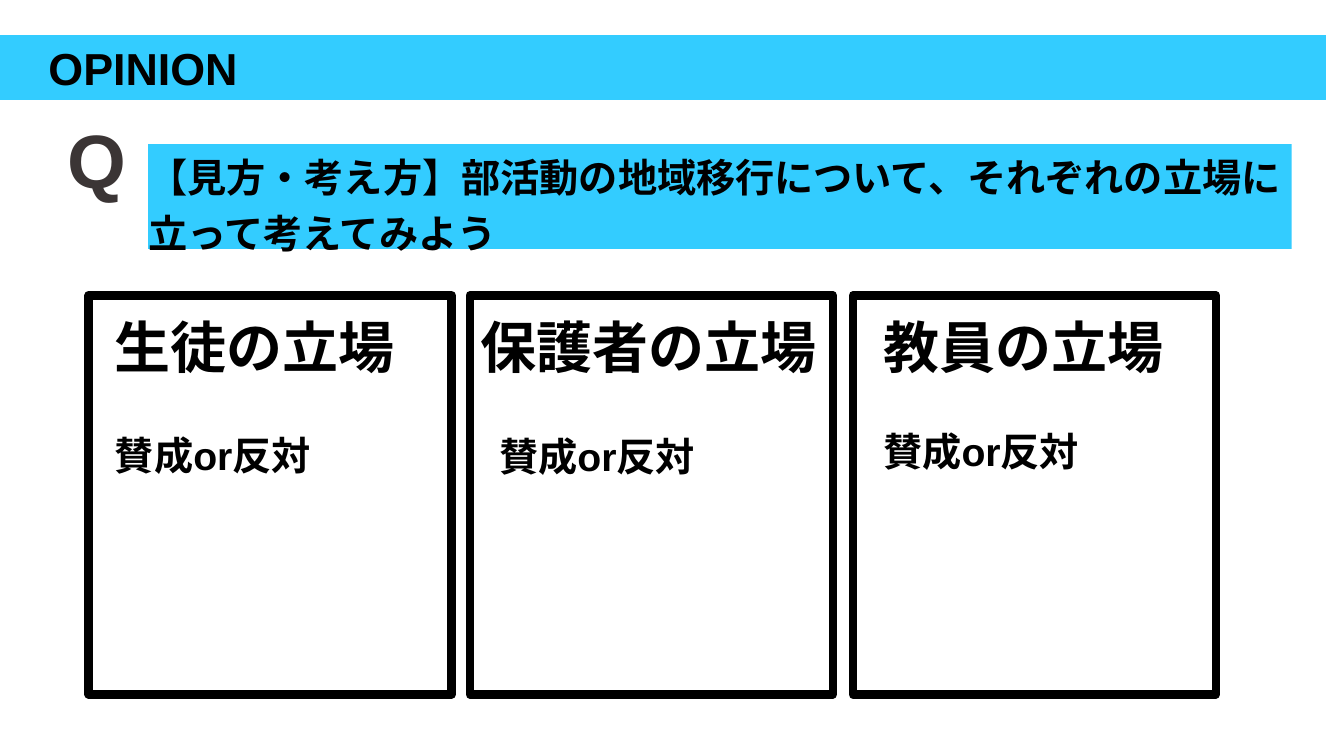
"""Build the opinion slide with a question and three stance boxes."""
from lxml.etree import SubElement
from pptx import Presentation
from pptx.dml.color import RGBColor
from pptx.enum.lang import MSO_LANGUAGE_ID
from pptx.enum.shapes import MSO_SHAPE
from pptx.enum.text import MSO_ANCHOR, PP_ALIGN
from pptx.oxml.ns import qn
from pptx.util import Inches, Pt

COLORS = {"sky": "33CCFF", "black": "000000", "charcoal": "3B3535"}
FONT = "Arial"
BOX_TOP, BOX_WIDTH, BOX_HEIGHT = 2.93, 3.6, 3.96
STANCES = [
    ("生徒の立場", 0.88, 1.14, 1.14, 4.25),
    ("保護者の立場", 4.66, 4.77, 4.95, 4.26),
    ("教員の立場", 8.46, 8.76, 8.76, 4.21),
]


def rgb(name):
    return RGBColor.from_string(COLORS[name])


def write(sp, text, size, color="black", spacing=None, inset=0, anchor=MSO_ANCHOR.TOP):
    tf = sp.text_frame
    tf.word_wrap = True
    tf.vertical_anchor = anchor
    tf.margin_left = Inches(inset)
    tf.margin_right = tf.margin_top = tf.margin_bottom = 0
    tf.text = text
    p = tf.paragraphs[0]
    p.alignment = PP_ALIGN.LEFT
    if spacing:
        p.line_spacing = Pt(spacing)
    r = p.runs[0]
    r.font.name = FONT
    r.font.size = Pt(size)
    r.font.bold = True
    r.font.color.rgb = rgb(color)
    r.font.language_id = MSO_LANGUAGE_ID.JAPANESE
    SubElement(r.font._element, qn("a:ea")).set("typeface", FONT)


def add_rect(s, left, top, width, height, fill=None, line=None, weight=0.75):
    sp = s.shapes.add_shape(MSO_SHAPE.RECTANGLE, Inches(left), Inches(top),
                            Inches(width), Inches(height))
    sp.shadow.inherit = False
    if fill:
        sp.fill.solid()
        sp.fill.fore_color.rgb = rgb(fill)
    else:
        sp.fill.background()
    if line:
        sp.line.color.rgb = rgb(line)
        sp.line.width = Pt(weight)
    else:
        sp.line.fill.background()
    return sp


def add_label(s, text, left, top, width, height, size, color="black"):
    sp = s.shapes.add_textbox(Inches(left), Inches(top), Inches(width), Inches(height))
    write(sp, text, size, color, spacing=36)


def add_stance(s, title, box_left, title_left, choice_left, choice_top):
    add_label(s, title, title_left, 3.27, 3.49, 0.48, 40)
    add_label(s, "賛成or反対", choice_left, choice_top, 3.15, 2.48, 28)
    add_rect(s, box_left, BOX_TOP, BOX_WIDTH, BOX_HEIGHT, line="black", weight=6)


def main():
    prs = Presentation()
    prs.slide_width, prs.slide_height = Inches(13.33), Inches(7.5)
    s = prs.slides.add_slide(prs.slide_layouts[6])

    banner = add_rect(s, 0, 0.35, 13.15, 0.64, "sky", "sky")
    write(banner, "OPINION", 32, inset=0.48, anchor=MSO_ANCHOR.MIDDLE)

    question = add_rect(s, 1.47, 1.43, 11.34, 1.04, "sky")
    write(question, "【見方・考え方】部活動の地域移行について、それぞれの立場に立って考えてみよう",
          28, spacing=40)
    add_label(s, "Q", 0.67, 1.52, 0.94, 0.64, 54, "charcoal")

    for stance in STANCES:
        add_stance(s, *stance)
    prs.save("out.pptx")


if __name__ == "__main__":
    main()
